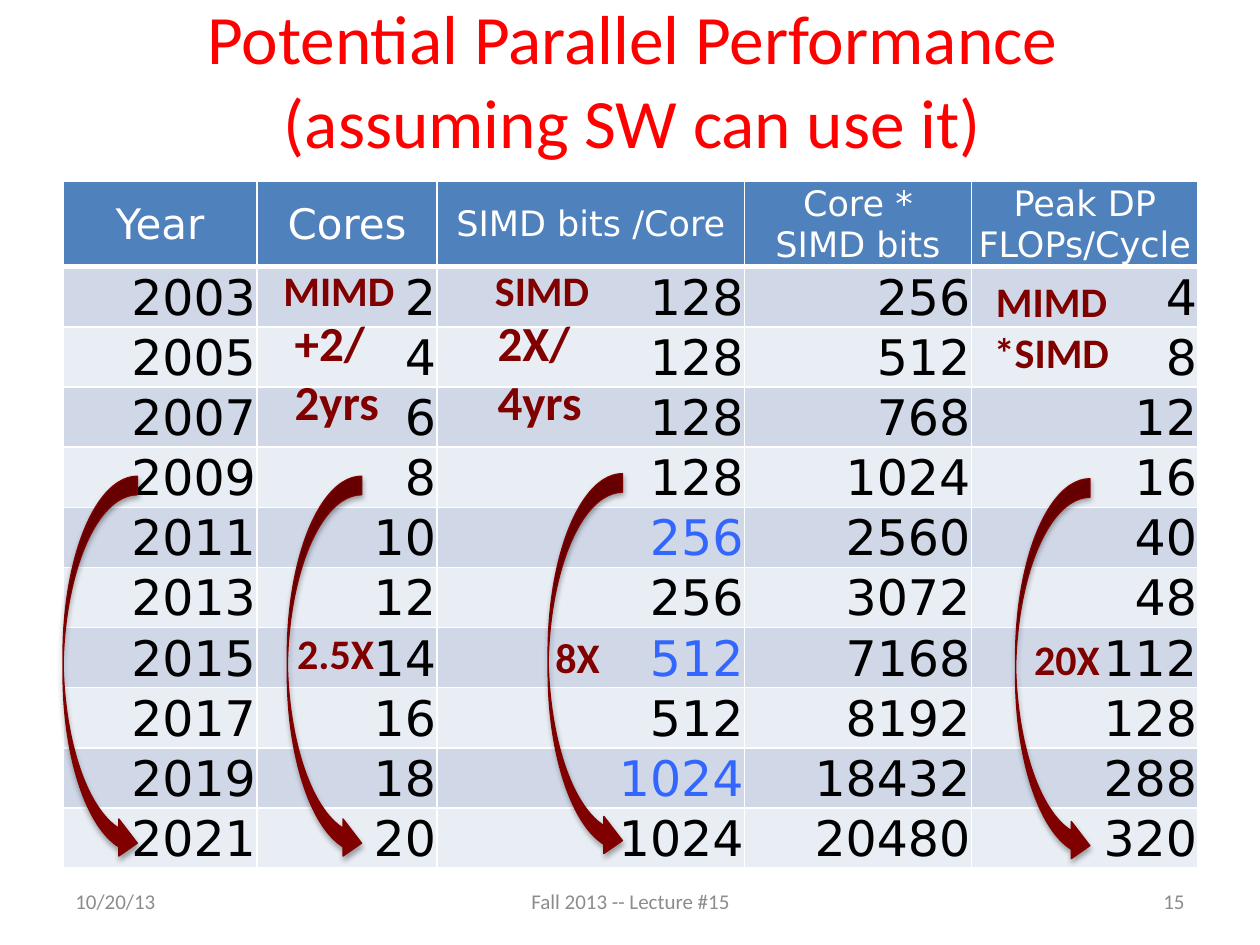
from dataclasses import dataclass
from typing import Any

from lxml import etree
from pptx import Presentation
from pptx.dml.color import RGBColor
from pptx.enum.shapes import MSO_SHAPE
from pptx.enum.text import MSO_ANCHOR, MSO_AUTO_SIZE, PP_ALIGN
from pptx.oxml.ns import qn
from pptx.util import Inches, Pt

LEFT, CENTER, RIGHT = PP_ALIGN.LEFT, PP_ALIGN.CENTER, PP_ALIGN.RIGHT
TOP, MIDDLE, BOTTOM = MSO_ANCHOR.TOP, MSO_ANCHOR.MIDDLE, MSO_ANCHOR.BOTTOM
GROW = MSO_AUTO_SIZE.SHAPE_TO_FIT_TEXT
CURVED_ARROW = MSO_SHAPE.CURVED_RIGHT_ARROW


@dataclass(frozen=True)
class Theme:
    text_font: str = "Calibri"
    table_font: str = "DejaVu Sans"
    title: str = "FF0000"
    header: str = "4F81BD"
    bands: tuple[str, str] = ("D0D8E8", "E9EDF4")
    white: str = "FFFFFF"
    black: str = "000000"
    step: str = "3366FF"
    accent: str = "800000"
    footer: str = "8C8C8C"
    title_size: float = 39.6
    number_size: float = 28
    header_size: float = 24
    small_header_size: float = 20
    label_size: float = 24
    rate_size: float = 28
    footer_size: float = 12


THEME = Theme()


@dataclass(frozen=True)
class TextBox:
    lines: tuple[str, ...]
    left: float
    top: float
    width: float
    height: float
    size: float = THEME.label_size
    color: str = THEME.accent
    bold: bool = True
    align: Any = LEFT
    anchor: Any = TOP
    fitted: bool = True


@dataclass(frozen=True)
class GrowthArrow:
    left: float
    top: float
    label: TextBox | None = None


TITLE = TextBox(("Potential Parallel Performance (assuming SW can use it)",), 0.52, 0, 9, 1.25,
                THEME.title_size, THEME.title, False, CENTER, MIDDLE, False)
FOOTERS = [
    TextBox((text,), left, 6.95, width, 0.4, THEME.footer_size, THEME.footer,
            False, align, MIDDLE, False)
    for text, left, width, align in (
        ("10/20/13", 0.5, 2.33, LEFT),
        ("Fall 2013 -- Lecture #15", 3.42, 3.17, CENTER),
        ("15", 7.17, 2.33, RIGHT),
    )
]
ARROWS = [
    GrowthArrow(0.5, 3.78),
    GrowthArrow(2.28, 3.78, TextBox(("2.5X",), 2.26, 4.93, 0.82, 0.5)),
    GrowthArrow(4.35, 3.76, TextBox(("8X",), 4.31, 4.96, 0.56, 0.5)),
    GrowthArrow(8.06, 3.8, TextBox(("20X",), 8.11, 4.98, 0.73, 0.5)),
]
CALLOUTS = [
    TextBox(("MIMD",), 2.15, 2.05, 1.09, 0.5),
    TextBox(("SIMD",), 3.83, 2.05, 0.96, 0.5),
    TextBox(("MIMD\n*SIMD",), 7.78, 2.14, 1.13, 0.91, align=CENTER),
    TextBox(("+2/", "2yrs"), 2.24, 2.43, 0.88, 1.04, THEME.rate_size),
    TextBox(("2X/", "4yrs"), 3.85, 2.43, 0.88, 1.04, THEME.rate_size),
]

HEADERS = [
    ("Year", THEME.header_size),
    ("Cores", THEME.header_size),
    ("SIMD bits /Core", THEME.small_header_size),
    ("Core *\nSIMD bits", THEME.small_header_size),
    ("Peak DP FLOPs/Cycle", THEME.small_header_size),
]
COLUMN_WIDTHS = (1.54, 1.43, 2.44, 1.8, 1.8)
ROW_HEIGHT = 0.41
SIMD_BITS = (128, 128, 128, 128, 256, 256, 512, 512, 1024, 1024)
DOUBLE_BITS = 64


def set_format(target: Any, values: dict[str, Any]) -> None:
    for name, value in values.items():
        setattr(target, name, value)


def write_paragraph(paragraph: Any, text: str, align: Any, font: str,
                    size: float, color: str, bold: bool) -> None:
    paragraph.text = text
    paragraph.alignment = align
    for run in paragraph.runs:
        set_format(run.font, {"name": font, "size": Pt(size), "bold": bold})
        run.font.color.rgb = RGBColor.from_string(color)


def draw_text(shapes: Any, box: TextBox) -> None:
    shape = shapes.add_textbox(Inches(box.left), Inches(box.top),
                               Inches(box.width), Inches(box.height))
    frame = shape.text_frame
    set_format(frame, {"word_wrap": not box.fitted, "vertical_anchor": box.anchor})
    if box.fitted:
        frame.auto_size = GROW
    for index, line in enumerate(box.lines):
        paragraph = frame.add_paragraph() if index else frame.paragraphs[0]
        write_paragraph(paragraph, line, box.align, THEME.text_font,
                        box.size, box.color, box.bold)


def add_solid_color(parent: Any, color: str) -> Any:
    fill = etree.SubElement(parent, qn("a:solidFill"))
    return etree.SubElement(fill, qn("a:srgbClr"), val=color)


def draw_cell(cell: Any, text: str, size: float, color: str, fill: str,
              align: Any, anchor: Any, bottom_border: float) -> None:
    set_format(cell, {
        "margin_left": Inches(0.01), "margin_right": Inches(0.01),
        "margin_top": Inches(0.01), "margin_bottom": Inches(0),
        "vertical_anchor": anchor,
    })
    write_paragraph(cell.text_frame.paragraphs[0], text, align,
                    THEME.table_font, size, color, False)
    # Borders come before the fill in the cell properties
    properties = cell._tc.get_or_add_tcPr()
    for side, width in (("L", 1), ("R", 1), ("T", 1), ("B", bottom_border)):
        border = etree.SubElement(properties, qn(f"a:ln{side}"), w=str(Pt(width)))
        add_solid_color(border, THEME.white)
    cell.fill.solid()
    cell.fill.fore_color.rgb = RGBColor.from_string(fill)


def draw_table(shapes: Any) -> None:
    row_count = len(SIMD_BITS) + 1
    frame = shapes.add_table(row_count, len(HEADERS), Inches(0.5), Inches(1.44),
                             Inches(9), Inches(5.49))
    table = frame.table
    for column, width in zip(table.columns, COLUMN_WIDTHS):
        column.width = Inches(width)
    for row in table.rows:
        row.height = Inches(ROW_HEIGHT)
    set_format(frame, {"width": Inches(9), "height": Inches(5.49)})

    for column, (text, size) in enumerate(HEADERS):
        draw_cell(table.cell(0, column), text, size, THEME.white, THEME.header,
                  CENTER, MIDDLE, 3)
    # Two more cores every two years; peak counts 64-bit lanes
    for index, bits in enumerate(SIMD_BITS):
        cores = 2 * (index + 1)
        total_bits = cores * bits
        values = (2003 + 2 * index, cores, bits, total_bits, total_bits // DOUBLE_BITS)
        widened = index > 0 and bits != SIMD_BITS[index - 1]
        for column, value in enumerate(values):
            color = THEME.step if widened and column == 2 else THEME.black
            draw_cell(table.cell(index + 1, column), str(value), THEME.number_size,
                      color, THEME.bands[index % 2], RIGHT, BOTTOM, 1)


def draw_arrow(shapes: Any, arrow: GrowthArrow) -> None:
    if arrow.label:
        shapes = shapes.add_group_shape().shapes
    shape = shapes.add_shape(CURVED_ARROW, Inches(arrow.left), Inches(arrow.top),
                             Inches(0.59), Inches(3.06))
    shape.fill.solid()
    shape.fill.fore_color.rgb = RGBColor.from_string(THEME.accent)
    shape.line.color.rgb = RGBColor.from_string(THEME.accent)
    shape.line.width = Pt(0.75)
    # Soft shadow straight below
    effects = etree.SubElement(shape._element.spPr, qn("a:effectLst"))
    shadow = etree.SubElement(effects, qn("a:outerShdw"), blurRad=str(Pt(3.1)),
                              dist=str(Pt(1.8)), dir="5400000", rotWithShape="0")
    etree.SubElement(add_shadow_color(shadow), qn("a:alpha"), val="35000")
    if arrow.label:
        draw_text(shapes, arrow.label)


def add_shadow_color(shadow: Any) -> Any:
    return etree.SubElement(shadow, qn("a:srgbClr"), val=THEME.black)


def main() -> None:
    presentation = Presentation()
    set_format(presentation, {"slide_width": Inches(10), "slide_height": Inches(7.5)})
    slide = presentation.slides.add_slide(presentation.slide_layouts[6])
    draw_text(slide.shapes, TITLE)
    draw_table(slide.shapes)
    for footer in FOOTERS:
        draw_text(slide.shapes, footer)
    for arrow in ARROWS:
        draw_arrow(slide.shapes, arrow)
    for callout in CALLOUTS:
        draw_text(slide.shapes, callout)
    presentation.save("out.pptx")


if __name__ == "__main__":
    main()
